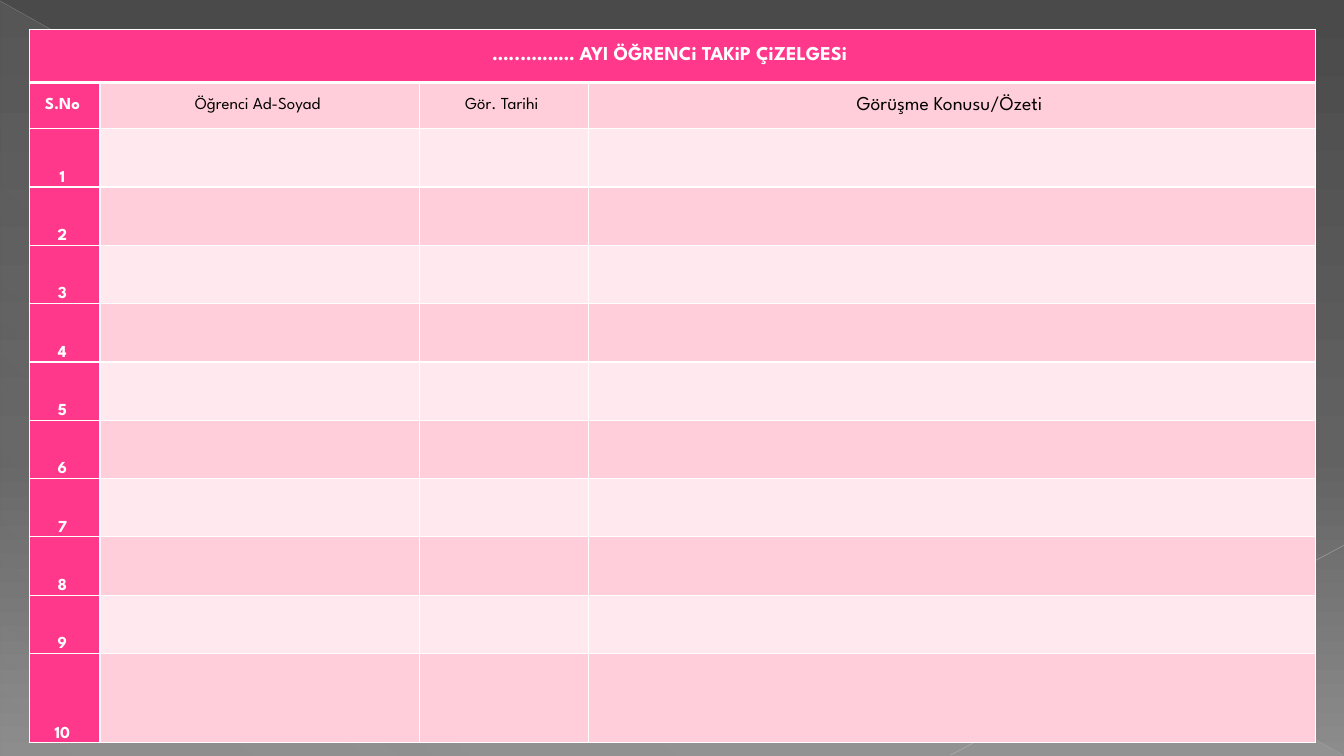
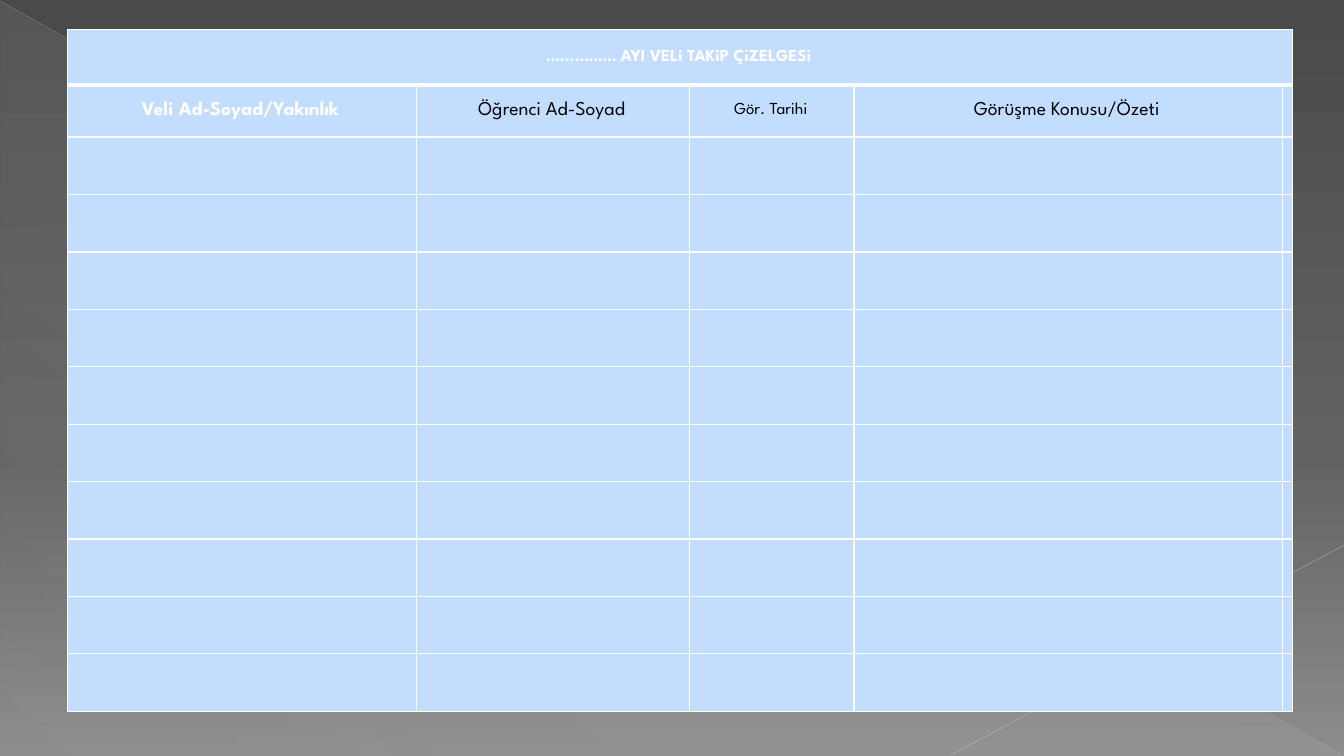
from lxml.etree import SubElement
from pptx import Presentation
from pptx.dml.color import RGBColor
from pptx.enum.shapes import MSO_CONNECTOR, MSO_SHAPE
from pptx.enum.text import MSO_ANCHOR, PP_ALIGN
from pptx.oxml.ns import qn
from pptx.util import Inches, Pt

WHITE = RGBColor(0xFF, 0xFF, 0xFF)
BLACK = RGBColor(0x00, 0x00, 0x00)
PINK = RGBColor(0xFF, 0x38, 0x8C)
ROSE = RGBColor(0xFF, 0xCE, 0xDA)
BLUSH = RGBColor(0xFF, 0xE8, 0xEE)
SKY = RGBColor(0xC3, 0xDD, 0xFF)
COAL = RGBColor(0x4A, 0x4A, 0x4A)
SLATE = RGBColor(0x62, 0x62, 0x62)
STONE = RGBColor(0x8C, 0x8C, 0x8C)
SHEEN = RGBColor(0xD2, 0xD2, 0xD2)
SILVER = RGBColor(0xBF, 0xBF, 0xBF)
ASH = RGBColor(0xC6, 0xC6, 0xC6)

FONT = "League Spartan"
GRID = 100  # columns and rows on a slide


def tint(node, color, alpha=100):
    """Add a colour, with its opacity in percent, to an XML node."""
    tone = SubElement(node, qn("a:srgbClr"), val=str(color))
    if alpha < 100:
        SubElement(tone, qn("a:alpha"), val=str(alpha * 1000))


def blend(fill, root, angle, stops):
    """Make a clockwise gradient of (position, colour, opacity) stops."""
    fill.gradient()
    grad = next(root.iter(qn("a:gradFill")))
    for part in list(grad):
        grad.remove(part)
    row = SubElement(grad, qn("a:gsLst"))
    for place, color, alpha in stops:
        tint(SubElement(row, qn("a:gs"), pos=str(place * 1000)), color, alpha)
    SubElement(grad, qn("a:lin"), ang=str(angle * 60000), scaled="0")


def write(cell, text, size=12, color=WHITE, bold=True, indent=0.04,
          anchor=MSO_ANCHOR.MIDDLE):
    cell.vertical_anchor = anchor
    para = cell.text_frame.paragraphs[0]
    para.alignment = PP_ALIGN.CENTER
    para.line_spacing = 1.07
    para._p.get_or_add_pPr().set("marL", str(Inches(indent)))
    run = para.add_run()
    run.text = text + " "
    font = run.font
    font.name, font.size, font.bold = FONT, Pt(size), bold
    font.color.rgb = color


def border(cell, top=1, bottom=1):
    """Draw white rules, with widths in points, round a cell."""
    props = cell._tc.get_or_add_tcPr()
    sides = {"L": 1, "R": 1, "T": top, "B": bottom}
    for spot, (side, width) in enumerate(sides.items()):
        line = SubElement(props, qn("a:ln" + side), w=str(Pt(width)))
        tint(SubElement(line, qn("a:solidFill")), WHITE)
        props.insert(spot, line)


class Deck:
    """Holds the style and the current slide; lengths are grid units."""

    def __init__(self):
        self.show = Presentation()
        self.show.slide_width = Inches(13.33)
        self.show.slide_height = Inches(7.5)
        master = self.show.slide_master
        blend(master.background.fill, master.element, 90,
              [(0, COAL, 100), (60, SLATE, 100), (100, STONE, 100)])

    def spot(self, col, row):
        return (round(self.show.slide_width * col / GRID),
                round(self.show.slide_height * row / GRID))

    def page(self):
        self.slide = self.show.slides.add_slide(self.show.slide_layouts[6])
        self.wedge()
        self.line((0, 0.13), (99.92, 99.87), SILVER, 0.39, 35)
        self.line((100, 72.13), (70.74, 99.87), ASH, 0.47, 45)

    def wedge(self):
        shape = self.slide.shapes.add_shape(
            MSO_SHAPE.RIGHT_TRIANGLE, *self.spot(0.08, 0.27),
            *self.spot(99.85, 99.73))
        shape.shadow.inherit = False
        shape.line.fill.background()
        blend(shape.fill, shape.element, 133,
              [(0, SHEEN, 10), (70, SHEEN, 8), (100, SHEEN, 1)])

    def line(self, start, end, color, width, alpha):
        rule = self.slide.shapes.add_connector(
            MSO_CONNECTOR.STRAIGHT, *self.spot(*start), *self.spot(*end))
        rule.line.width = Pt(width)
        rule.line.color.rgb = color
        tone = next(rule.element.spPr.iter(qn("a:srgbClr")))
        SubElement(tone, qn("a:alpha"), val=str(alpha * 1000))
        SubElement(rule.element.spPr, qn("a:effectLst"))

    def table(self, at, size, cols, rows, paint, pad):
        """Add a table; cols and rows are weights, paint gives cell fills."""
        wide, high = self.spot(*size)
        table = self.slide.shapes.add_table(
            len(rows), len(cols), *self.spot(*at), wide, high).table
        for col, part in zip(table.columns, cols):
            col.width = round(wide * part / sum(cols))
        for row, part in zip(table.rows, rows):
            row.height = round(high * part / sum(rows))
        for r in range(len(rows)):
            for c in range(len(cols)):
                cell = table.cell(r, c)
                cell.margin_left, cell.margin_right = map(Inches, pad)
                cell.margin_top, cell.margin_bottom = 0, Inches(0.01)
                cell.fill.solid()
                cell.fill.fore_color.rgb = paint(r, c)
                border(cell, 3 if r == 1 else 1, 3 if r == 0 else 1)
        table.cell(0, 0).merge(table.cell(0, len(cols) - 1))
        return table

    def heads(self, table, title, size, heads, indent):
        """Fill the title row and the row of (text, size) headings."""
        write(table.cell(0, 0), title, size=size, indent=indent)
        for c, (text, size) in enumerate(heads):
            write(table.cell(1, c), text, size=size, indent=indent,
                  color=BLACK if c else WHITE, bold=c == 0)


def pink(row, col):
    if row == 0 or col == 0:
        return PINK
    return ROSE if row % 2 else BLUSH


def pupils(deck):
    deck.page()
    table = deck.table((2.18, 3.87), (95.72, 94.4), [0.7, 3.17, 1.67, 7.21],
                       [0.53, 0.46] + [0.58] * 9 + [0.89], pink, (0.03, 0.07))
    deck.heads(table, "…...……… AYI ÖĞRENCi TAKiP ÇiZELGESi", 14,
               [("S.No", 12), ("Öğrenci Ad-Soyad", 12), ("Gör. Tarihi", 12),
                ("Görüşme Konusu/Özeti", 14)], 0.04)
    for num in range(1, 11):
        write(table.cell(num + 1, 0), str(num), anchor=MSO_ANCHOR.BOTTOM)


def parents(deck):
    deck.page()
    table = deck.table((5.03, 3.87), (91.07, 90.27),
                       [3.46, 2.71, 1.63, 4.25, 0.09],
                       [0.55, 0.52] + [0.57] * 10,
                       lambda row, col: SKY, (0, 0.06))
    deck.heads(table, "…...……… AYI VELi TAKiP ÇiZELGESi", 12,
               [("Veli Ad-Soyad/Yakınlık", 14), ("Öğrenci Ad-Soyad", 14),
                ("Gör. Tarihi", 12), ("Görüşme Konusu/Özeti", 14)], 0.08)


def main():
    deck = Deck()
    pupils(deck)
    parents(deck)
    deck.show.save("out.pptx")


if __name__ == "__main__":
    main()
